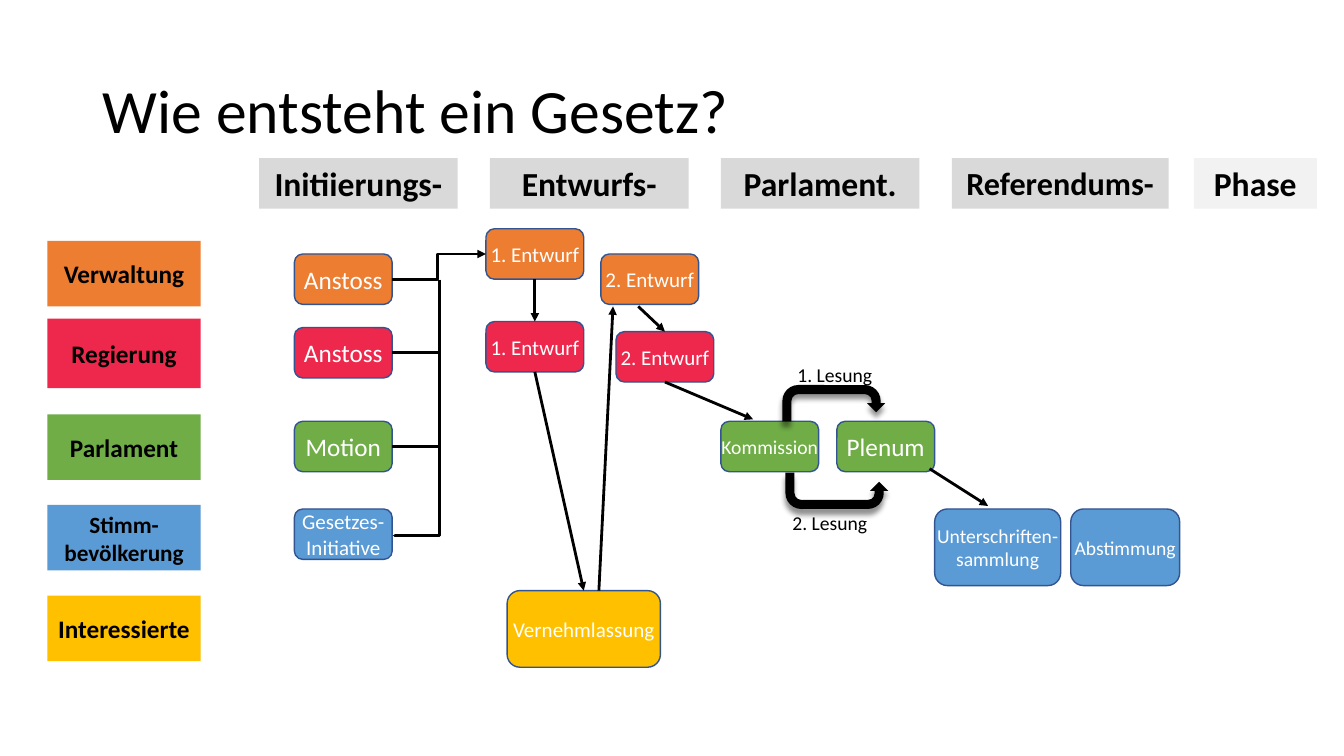
from lxml.etree import SubElement
from pptx import Presentation
from pptx.dml.color import RGBColor
from pptx.enum.shapes import MSO_CONNECTOR as LINE, MSO_SHAPE as SHAPE
from pptx.enum.text import MSO_ANCHOR as ANCHOR, PP_ALIGN as ALIGN
from pptx.oxml.ns import qn
from pptx.util import Pt

PX = 9144  # 100 px to the inch
FONT = "Calibri"
BLACK = RGBColor(0x00, 0x00, 0x00)
WHITE = RGBColor(0xFF, 0xFF, 0xFF)
ORANGE = RGBColor(0xED, 0x7D, 0x31)
RED = RGBColor(0xED, 0x28, 0x4C)
GREEN = RGBColor(0x70, 0xAD, 0x47)
BLUE = RGBColor(0x5B, 0x9B, 0xD5)
YELLOW = RGBColor(0xFF, 0xC0, 0x00)
GREY = RGBColor(0xD9, 0xD9, 0xD9)
PALE_GREY = RGBColor(0xF2, 0xF2, 0xF2)
OUTLINE = RGBColor(0x32, 0x54, 0x91)

NODE_W, NODE_H = 97, 50
TOP, LEFT, BOTTOM, RIGHT = range(4)


def emu(*lengths):
    return [length * PX for length in lengths]


def write(shape, lines, size, color, bold=False, align=ALIGN.CENTER,
          anchor=ANCHOR.MIDDLE, wrap=True, inset=5, spacing=None):
    frame = shape.text_frame
    frame.word_wrap = wrap
    frame.vertical_anchor = anchor
    frame.margin_left = frame.margin_right = inset * PX
    for i, line in enumerate(lines):
        paragraph = frame.add_paragraph() if i else frame.paragraphs[0]
        paragraph.alignment = align
        if spacing:
            paragraph.line_spacing = spacing
        run = paragraph.add_run()
        run.text = line
        run.font.name, run.font.size, run.font.bold = FONT, Pt(size), bold
        run.font.color.rgb = color


def filled(slide, kind, box, fill, outline=None):
    shape = slide.shapes.add_shape(kind, *emu(*box))
    shape.shadow.inherit = False
    shape.fill.solid()
    shape.fill.fore_color.rgb = fill
    if outline is None:
        shape.line.fill.background()
    else:
        shape.line.color.rgb = outline
        shape.line.width = Pt(1)
    return shape


def node(slide, left, top, lines, fill, size, width=NODE_W, height=NODE_H):
    box = (left, top, width, height)
    shape = filled(slide, SHAPE.FLOWCHART_ALTERNATE_PROCESS, box, fill, OUTLINE)
    write(shape, lines, size, WHITE, wrap=False)
    return shape


def link(slide, start, end, arrow=True, kind=LINE.STRAIGHT, bend=None):
    """Each end is a point (x, y) in px or a pair (shape, side)."""
    begin_joined, end_joined = (not isinstance(e[0], int) for e in (start, end))
    first = (0, 0) if begin_joined else start
    last = (0, 0) if end_joined else end
    connector = slide.shapes.add_connector(kind, *emu(*first, *last))
    if begin_joined:
        connector.begin_connect(*start)
    if end_joined:
        connector.end_connect(*end)
    connector.line.color.rgb = BLACK
    connector.line.width = Pt(2)
    properties = connector._element.spPr
    if arrow:
        SubElement(connector.line._get_or_add_ln(), qn("a:tailEnd"), type="triangle")
    SubElement(properties, qn("a:effectLst"))
    if bend:
        guides = properties.find(qn("a:prstGeom")).get_or_add_avLst()
        SubElement(guides, qn("a:gd"), name="adj1", fmla=f"val {bend}")
    return connector


def title(slide, box):
    heading = slide.shapes.add_textbox(*emu(*box))
    write(heading, ["Wie entsteht ein Gesetz?"], 44, BLACK,
          align=ALIGN.LEFT, inset=10, spacing=0.9)


def actors(slide, left, top):
    rows = [
        (0, 65, ["Verwaltung"], ORANGE, 18),
        (77, 69, ["Regierung"], RED, 18),
        (172, 65, ["Parlament"], GREEN, 18),
        (262, 65, ["Stimm-", "bevölkerung"], BLUE, 16.6),
        (352, 65, ["Interessierte"], YELLOW, 18),
    ]
    for dy, height, lines, fill, size in rows:
        label = filled(slide, SHAPE.RECTANGLE, (left, top + dy, 152, height), fill)
        write(label, lines, size, BLACK, bold=True)


def phases(slide, left, top):
    columns = [
        (0, 197, "Initiierungs-", GREY, 24),
        (229, 197, "Entwurfs-", GREY, 24),
        (458, 197, "Parlament.", GREY, 24),
        (687, 215, "Referendums-", GREY, 23),
        (927, 122, "Phase", PALE_GREY, 24),
    ]
    for dx, width, name, fill, size in columns:
        header = filled(slide, SHAPE.RECTANGLE, (left + dx, top, width, 50), fill)
        write(header, [name], size, BLACK, bold=True, anchor=ANCHOR.TOP)


def initiation(slide, left, top):
    administration = node(slide, left, top, ["Anstoss"], ORANGE, 18)
    government = node(slide, left, top + 73, ["Anstoss"], RED, 18)
    motion = node(slide, left, top + 166, ["Motion"], GREEN, 18)
    node(slide, left, top + 253, ["Gesetzes-", "Initiative"], BLUE, 15)

    # Side branches into the collecting line
    for branch, dy in ((government, 98), (motion, 191)):
        link(slide, (branch, RIGHT), (left + 142, top + dy), arrow=False)

    # Collecting line: goes down, then left to the initiative
    run, rise = 253, 44
    middle_x, middle_y = left + 121, top + 152
    x, y = middle_x - run // 2, middle_y - rise // 2
    collector = link(slide, (x, y), (x + run, y + rise), arrow=False,
                     kind=LINE.ELBOW, bend=100300)
    collector._element.spPr.find(qn("a:xfrm")).set("rot", "5400000")
    return administration


def drafting(slide, left, top, impulse):
    first = node(slide, left, top, ["1. Entwurf"], ORANGE, 15)
    first_checked = node(slide, left, top + 92, ["1. Entwurf"], RED, 15)
    consultation = node(slide, left + 21, top + 359, ["Vernehmlassung"],
                        YELLOW, 15, 152, 76)
    node(slide, left + 114, top + 25, ["2. Entwurf"], ORANGE, 15)
    second_checked = node(slide, left + 129, top + 102, ["2. Entwurf"], RED, 15)

    link(slide, (impulse, RIGHT), (first, LEFT), kind=LINE.ELBOW, bend=48400)
    link(slide, (first, BOTTOM), (first_checked, TOP))
    link(slide, (first_checked, BOTTOM), (consultation, TOP))
    link(slide, (left + 112, top + 359), (left + 126, top + 77))
    link(slide, (left + 151, top + 77), (second_checked, TOP))
    return second_checked


def reading(slide, left, top, text, text_left, text_top, flipped):
    turn = filled(slide, SHAPE.U_TURN_ARROW, (left, top, 102, 36), BLACK)
    properties = turn._element.spPr
    if flipped:
        properties.find(qn("a:xfrm")).set("flipV", "1")
    shadow = SubElement(properties.find(qn("a:effectLst")), qn("a:outerShdw"),
                        blurRad=str(Pt(4)), dist=str(Pt(4)), dir="5400000")
    color = SubElement(shadow, qn("a:srgbClr"), val=str(BLACK))
    SubElement(color, qn("a:alpha"), val="43000")
    caption = slide.shapes.add_textbox(*emu(text_left, text_top, 102, 34))
    write(caption, [text], 14, BLACK, align=ALIGN.LEFT, anchor=ANCHOR.TOP, inset=10)


def parliament(slide, left, top, draft):
    node(slide, left, top, ["Kommission"], GREEN, 14)
    node(slide, left + 115, top, ["Plenum"], GREEN, 18)
    reading(slide, left + 61, top - 36, "1. Lesung", left + 66, top - 63, False)
    reading(slide, left + 64, top + 51, "2. Lesung", left + 61, top + 84, True)
    link(slide, (draft, BOTTOM), (left + 32, top - 2))


def referendum(slide, left, top):
    node(slide, left, top, ["Unterschriften-", "sammlung"], BLUE, 14, 125, 76)
    node(slide, left + 135, top, ["Abstimmung"], BLUE, 14, 108, 76)
    link(slide, (left - 5, top - 40), (left + 53, top - 3))


def main():
    deck = Presentation()
    deck.slide_width, deck.slide_height = emu(1333, 750)
    slide = deck.slides.add_slide(deck.slide_layouts[6])
    title(slide, (92, 40, 1150, 145))
    actors(slide, 47, 239)
    phases(slide, 257, 157)
    impulse = initiation(slide, 292, 252)
    draft = drafting(slide, 482, 227, impulse)
    parliament(slide, 715, 418, draft)
    referendum(slide, 927, 505)
    deck.save("out.pptx")


if __name__ == "__main__":
    main()
